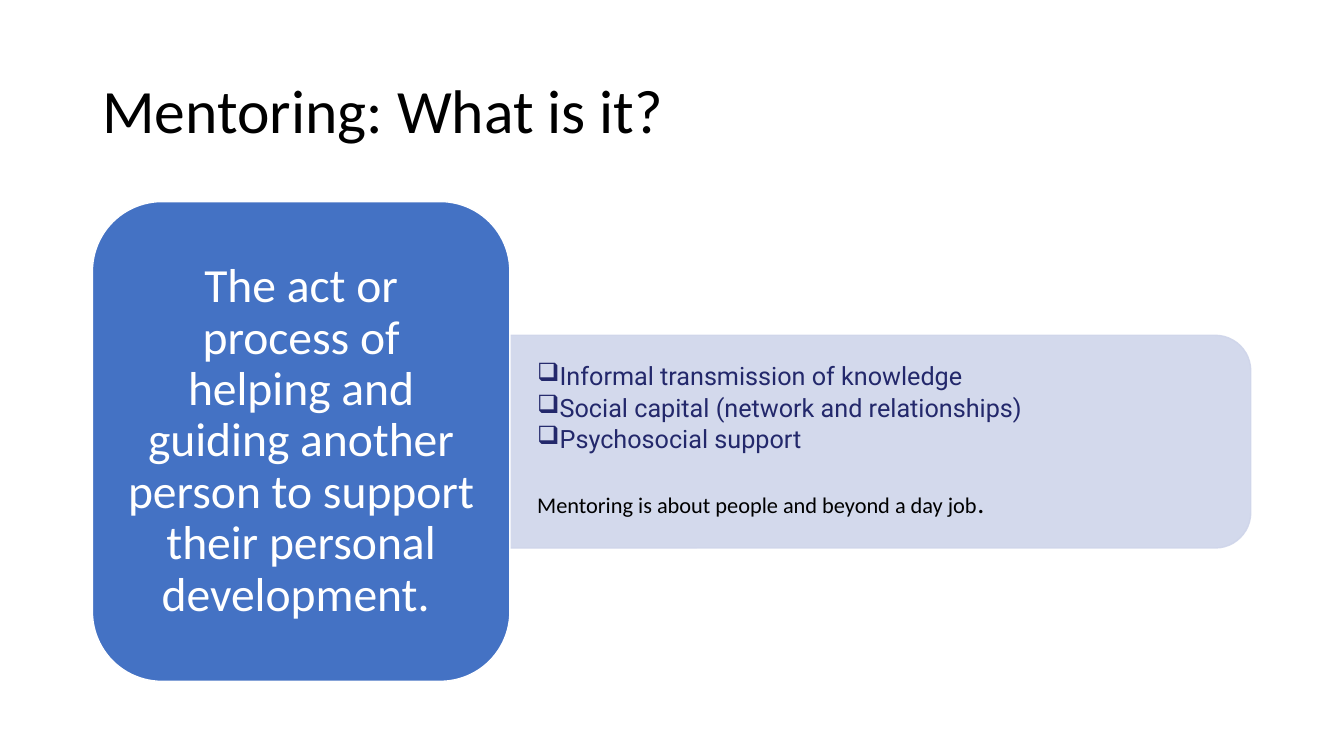
import lxml.etree
import pptx
import pptx.dml.color
import pptx.enum.shapes
import pptx.enum.text
import pptx.oxml.ns
import pptx.util

Cm = pptx.util.Cm
Pt = pptx.util.Pt
Kind = pptx.enum.shapes.MSO_SHAPE
Align = pptx.enum.text.PP_ALIGN


class Theme:
    black, white = "000000", "FFFFFF"
    blue, pale, navy = "4472C4", "CFD5EA", "23286B"
    body, point = "Calibri", "Roboto"
    title, quote, item, note, stop = 44, 34, 18, 16, 20


def tint(hue):
    return pptx.dml.color.RGBColor.from_string(hue)


def child(node, tag, **attrs):
    return lxml.etree.SubElement(node, pptx.oxml.ns.qn(tag), **attrs)


class Page:
    def __init__(self, deck, theme):
        self.theme = theme
        self.slide = deck.slides.add_slide(deck.slide_layouts[6])

    def shape(self, kind, place, fill, line, turn=0, alpha=None):
        shape = self.slide.shapes.add_shape(kind, *map(Cm, place))
        shape.shadow.inherit = False
        shape.rotation = turn
        shape.fill.solid()
        shape.fill.fore_color.rgb = tint(fill)
        shape.line.color.rgb = tint(line)
        shape.line.width = Pt(1)
        if alpha:
            for hue in shape._element.spPr.iter(pptx.oxml.ns.qn("a:srgbClr")):
                child(hue, "a:alpha", val=str(alpha * 1000))
        return shape

    def text(self, place, inset):
        return self.frame(self.slide.shapes.add_textbox(*map(Cm, place)), inset)

    def frame(self, shape, inset):
        frame = shape.text_frame
        frame.word_wrap = True
        frame.vertical_anchor = pptx.enum.text.MSO_ANCHOR.MIDDLE
        frame.margin_left = frame.margin_right = Cm(inset[0])
        frame.margin_top = frame.margin_bottom = Cm(inset[1])
        return frame

    def para(self, para, words, size, hue, font=Theme.body,
             align=Align.LEFT, after=0):
        para.text = words
        para.alignment = align
        para.line_spacing = 0.9
        para.space_after = Pt(after)
        self.style(para.runs[0], size, hue, font)

    def style(self, run, size, hue, font=Theme.body):
        run.font.size = Pt(size)
        run.font.name = font
        run.font.color.rgb = tint(hue)

    def bullet(self, para, mark):
        props = para._p.get_or_add_pPr()
        props.set("marL", str(Cm(0.48)))
        props.set("indent", str(-Cm(0.48)))
        child(props, "a:buChar", char=mark)


def main():
    deck = pptx.Presentation()
    deck.slide_width, deck.slide_height = Cm(33.87), Cm(19.05)
    theme = Theme()
    page = Page(deck, theme)

    # Title
    head = page.text((2.33, 1.02, 29.21, 3.68), (0.25, 0.13))
    page.para(head.paragraphs[0], "Mentoring: What is it?",
              theme.title, theme.black)

    # Pale panel, turned so its round corners face right
    page.shape(Kind.ROUND_2_SAME_RECTANGLE, (19.5, 1.79, 5.36, 18.68),
               theme.pale, theme.pale, turn=90, alpha=90)

    # Points and closing note on the panel
    panel = page.text((12.85, 8.71, 18.44, 4.83), (0.69, 0.36))
    points = ("Informal transmission of knowledge",
              "Social capital (network and relationships)",
              "Psychosocial support")
    for rank, words in enumerate(points):
        para = panel.add_paragraph() if rank else panel.paragraphs[0]
        page.bullet(para, "❑")
        page.para(para, words, theme.item, theme.navy, theme.point, after=3)
    note = panel.add_paragraph()
    page.para(note, "Mentoring is about people and beyond a day job",
              theme.note, theme.black, after=3)
    note.space_before = Pt(22)
    stop = note.add_run()
    stop.text = "."
    page.style(stop, theme.stop, theme.black)

    # Blue card with the definition
    card = page.shape(Kind.ROUNDED_RECTANGLE, (2.33, 5.08, 10.52, 12.09),
                      theme.blue, theme.white)
    quote = page.frame(card, (0.36, 0.18))
    page.para(quote.paragraphs[0],
              "The act or process of helping and guiding another person "
              "to support their personal development. ",
              theme.quote, theme.white, align=Align.CENTER)

    deck.save("out.pptx")


if __name__ == "__main__":
    main()
